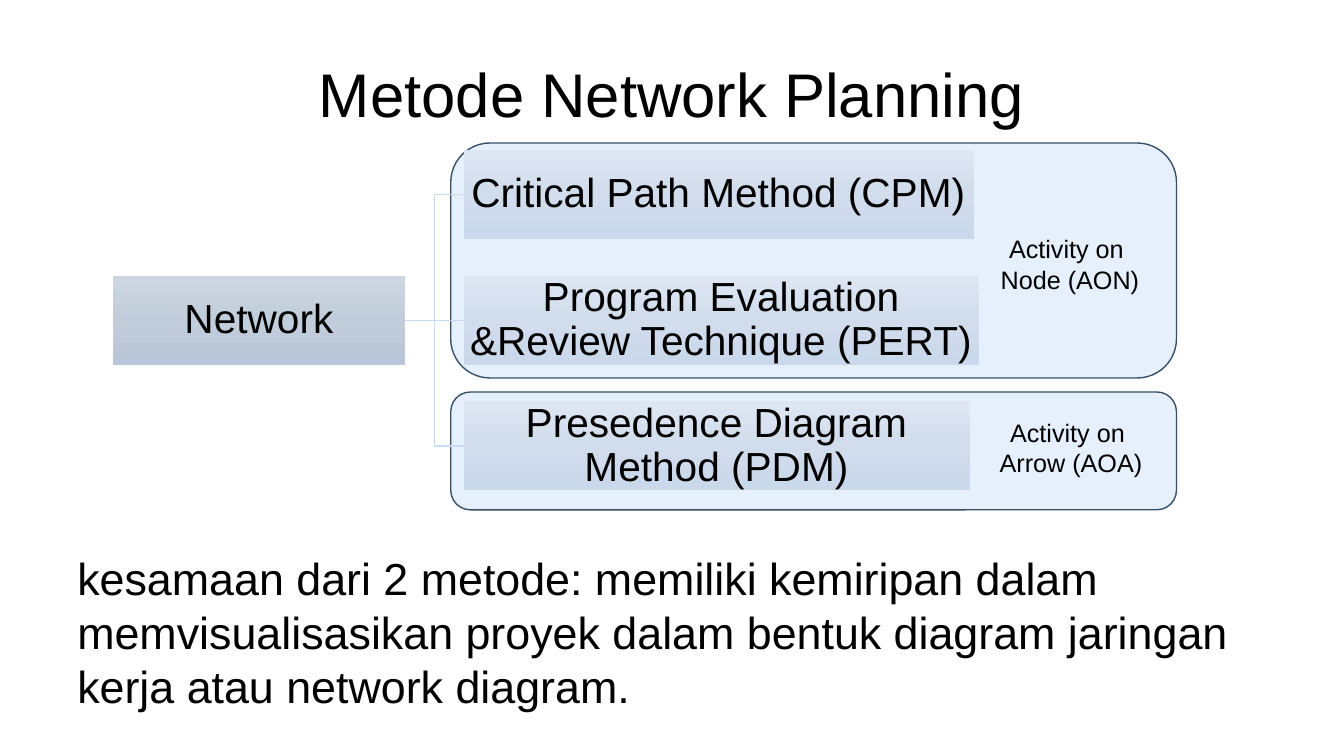
import copy

import pptx
import pptx.util
import pptx.dml.color
import pptx.enum.shapes
import pptx.enum.text
import pptx.oxml
import pptx.oxml.ns

Pt = pptx.util.Pt
RGB = pptx.dml.color.RGBColor
SHAPE = pptx.enum.shapes.MSO_SHAPE
LINK = pptx.enum.shapes.MSO_CONNECTOR
ALIGN = pptx.enum.text.PP_ALIGN
ANCHOR = pptx.enum.text.MSO_ANCHOR
FIT = pptx.enum.text.MSO_AUTO_SIZE
qn = pptx.oxml.ns.qn

BLACK = RGB(0x00, 0x00, 0x00)
PALE = RGB(0xE5, 0xF0, 0xFC)
NAVY = RGB(0x37, 0x50, 0x69)
SKY = RGB(0xC7, 0xDB, 0xF6)
ROOT = [RGB(0xCE, 0xD6, 0xE2), RGB(0xC2, 0xCD, 0xDB), RGB(0xB9, 0xC6, 0xD7)]
LEAF = [RGB(0xDD, 0xE6, 0xF2), RGB(0xD1, 0xDC, 0xEC), RGB(0xCA, 0xD8, 0xEB)]

ROOT_X, ROOT_W = 80.9, 208.3
LEAF_X, LEAF_TOP, STEP = 331.2, 107.4, 89.7
NODE_H = 63.5
LEAVES = [
    ("Critical Path Method (CPM)", 364.3),
    ("Program Evaluation &Review Technique (PERT)", 367.9),
    ("Presedence Diagram Method (PDM)", 361.4),
]


def place(shape, left, top, width, height):
    shape.left, shape.top = Pt(left), Pt(top)
    shape.width, shape.height = Pt(width), Pt(height)


def write(frame, lines, size, align):
    for i, line in enumerate(lines):
        para = frame.paragraphs[0] if i == 0 else frame.add_paragraph()
        para.alignment = align
        run = para.add_run()
        run.text = line
        run.font.size = Pt(size)
        run.font.name = "Arial"
        run.font.color.rgb = BLACK


def fill_holder(holder, box, text, size, align, anchor):
    place(holder, *box)
    frame = holder.text_frame
    frame.auto_size = FIT.NONE
    frame.vertical_anchor = anchor
    write(frame, [text], size, align)
    return frame.paragraphs[0]


def clear_bullet(para):
    props = para._p.get_or_add_pPr()
    props.set("marL", "0")
    props.set("indent", "0")
    props.append(pptx.oxml.parse_xml(
        '<a:buNone xmlns:a="http://schemas.openxmlformats.org/drawingml/2006/main"/>'))
    para.space_before = Pt(0)


def add_band(slide, top, height):
    band = slide.shapes.add_shape(
        SHAPE.ROUNDED_RECTANGLE, Pt(322), Pt(top), Pt(518.4), Pt(height))
    band.shadow.inherit = False
    band.fill.solid()
    band.fill.fore_color.rgb = PALE
    band.line.color.rgb = NAVY
    band.line.width = Pt(1)


def add_link(slide, end_y, start_y):
    kind = LINK.STRAIGHT if end_y == start_y else LINK.ELBOW
    link = slide.shapes.add_connector(
        kind, Pt(ROOT_X + ROOT_W), Pt(start_y), Pt(LEAF_X), Pt(end_y))
    link.line.color.rgb = SKY
    link.line.width = Pt(1)
    props = link._element.spPr
    props.append(props.makeelement(qn("a:effectLst"), {}))


def shade(shape, tones):
    shape.fill.gradient()
    shape.fill.gradient_angle = 270
    stops = shape._element.spPr.find(".//" + qn("a:gsLst"))
    stops.insert(1, copy.deepcopy(stops[0]))
    for i, stop in enumerate(shape.fill.gradient_stops):
        stop.position = i / 2
        stop.color.rgb = tones[i]


def add_node(slide, left, top, width, text, tones):
    node = slide.shapes.add_shape(
        SHAPE.RECTANGLE, Pt(left), Pt(top), Pt(width), Pt(NODE_H))
    node.shadow.inherit = False
    node.line.fill.background()
    shade(node, tones)
    frame = node.text_frame
    frame.word_wrap = True
    frame.vertical_anchor = ANCHOR.MIDDLE
    frame.margin_left = frame.margin_right = Pt(1.4)
    frame.margin_top = frame.margin_bottom = Pt(1.4)
    write(frame, [text], 29, ALIGN.CENTER)
    frame.paragraphs[0].line_spacing = 0.9


def add_label(slide, left, top, width, lines):
    box = slide.shapes.add_textbox(Pt(left), Pt(top), Pt(width), Pt(51))
    box.text_frame.word_wrap = False
    write(box.text_frame, lines, 18, ALIGN.CENTER)


def main():
    deck = pptx.Presentation()
    deck.slide_width, deck.slide_height = Pt(960), Pt(540)
    slide = deck.slides.add_slide(deck.slide_layouts[1])

    fill_holder(slide.shapes.title, (48, 21.6, 864, 90),
                "Metode Network Planning", 44, ALIGN.CENTER, ANCHOR.MIDDLE)
    body = fill_holder(
        slide.placeholders[1], (48, 390, 864, 122),
        "kesamaan dari 2 metode: memiliki kemiripan dalam memvisualisasikan "
        "proyek dalam bentuk diagram jaringan kerja atau network diagram.",
        32, ALIGN.LEFT, ANCHOR.TOP)
    clear_bullet(body)

    add_band(slide, 102.2, 167.8)
    add_band(slide, 280, 84.2)

    tops = [LEAF_TOP + i * STEP for i in range(len(LEAVES))]
    for top in tops:
        add_link(slide, top + NODE_H / 2, tops[1] + NODE_H / 2)
    add_node(slide, ROOT_X, tops[1], ROOT_W, "Network", ROOT)
    for top, (text, width) in zip(tops, LEAVES):
        add_node(slide, LEAF_X, top, width, text, LEAF)

    add_label(slide, 707, 163.4, 114.5, ["Activity on ", "Node (AON)"])
    add_label(slide, 706.3, 294.5, 117.4, ["Activity on ", "Arrow (AOA)"])

    deck.save("out.pptx")


if __name__ == "__main__":
    main()
